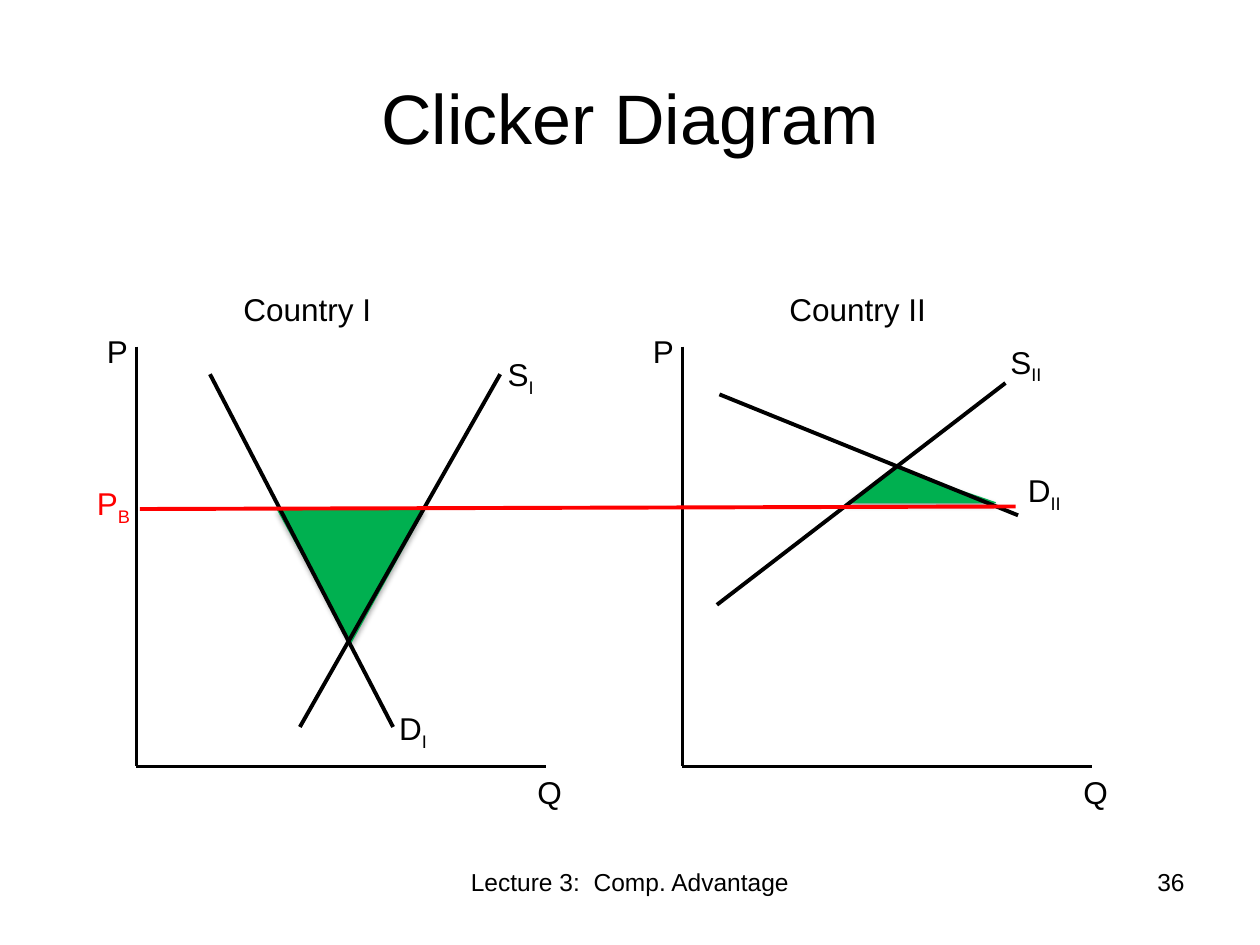
"""Draw a two-country supply and demand slide on a grid of 120 columns by 90 rows."""
from dataclasses import dataclass
from typing import Any, NamedTuple

import pptx
import pptx.dml.color
import pptx.enum.shapes
import pptx.enum.text
import pptx.oxml
import pptx.oxml.ns
import pptx.util

Align = pptx.enum.text.PP_ALIGN
Anchor = pptx.enum.text.MSO_ANCHOR
Fit = pptx.enum.text.MSO_AUTO_SIZE
Kind = pptx.enum.shapes.MSO_SHAPE
Wire = pptx.enum.shapes.MSO_CONNECTOR
Color = pptx.dml.color.RGBColor
Pt = pptx.util.Pt


@dataclass(frozen=True)
class Theme:
    face: str = "Arial"
    ink: Color = Color(0, 0, 0)
    price: Color = Color(255, 0, 0)
    gain: Color = Color(0, 176, 80)
    title: int = 40
    label: int = 18
    foot: int = 14
    stroke: float = 2.25
    edge: float = 0.75


class Line(NamedTuple):
    x1: float
    y1: float
    x2: float
    y2: float
    color: Color


class Label(NamedTuple):
    text: str
    x: float
    y: float
    w: float = 6
    h: float = 4.8
    sub: str = ""
    size: int = 18
    color: Color = Color(0, 0, 0)
    align: Align = Align.LEFT
    anchor: Anchor = Anchor.TOP
    fit: Fit = Fit.SHAPE_TO_FIT_TEXT


class Area(NamedTuple):
    x: float
    y: float
    w: float
    h: float
    peak: float
    turn: int


class Panel(NamedTuple):
    name: str
    left: float


THEME = Theme()
CELL = pptx.util.Inches(1) / 12
PANELS = [Panel("II", 65), Panel("I", 13)]
AREAS = [
    Area(26.4, 48.48, 14.04, 12.72, 0.5, 180),
    Area(80.76, 44.64, 14.04, 3.24, 0.33, 0),
]
CURVES = [
    Line(68.52, 37.56, 96.96, 49.08, THEME.ink),
    Line(68.28, 57.6, 95.76, 36.48, THEME.ink),
    Line(20, 35.64, 37.44, 69.24, THEME.ink),
    Line(28.56, 69.24, 47.64, 35.64, THEME.ink),
    Line(13.32, 48.48, 96.72, 48.24, THEME.price),
]
LABELS = [
    Label("D", 36.84, 66.96, sub="I"),
    Label("D", 96.72, 44.28, sub="II"),
    Label("S", 95.04, 32.04, sub="II"),
    Label("S", 47.16, 33.24, sub="I"),
    Label("P", 8.04, 45.48, sub="B", color=THEME.price),
    Label("Clicker Diagram", 6, 3.6, 108, 15, size=THEME.title,
          align=Align.CENTER, anchor=Anchor.MIDDLE, fit=Fit.NONE),
    Label("Lecture 3:  Comp. Advantage", 41, 82, 38, 6.25, size=THEME.foot,
          align=Align.CENTER, fit=Fit.NONE),
    Label("36", 86, 82, 28, 6.25, size=THEME.foot, align=Align.RIGHT, fit=Fit.NONE),
]
SHADE = (
    f'<a:outerShdw {pptx.oxml.ns.nsdecls("a")} blurRad="40000" dist="23000" '
    'dir="5400000" rotWithShape="0"><a:srgbClr val="000000">'
    '<a:alpha val="35000"/></a:srgbClr></a:outerShdw>'
)


def grid(*cells: float) -> list[int]:
    """Turn grid cells into slide lengths."""
    return [round(cell * CELL) for cell in cells]


def style(item: Any, form: dict[str, Any]) -> None:
    """Set each format value on an item."""
    for key, value in form.items():
        setattr(item, key, value)


def effects(item: Any) -> Any:
    """Give an item an empty effect list and return it."""
    props = item._element.spPr
    old = props.find(pptx.oxml.ns.qn("a:effectLst"))
    if old is not None:
        return old
    new = pptx.oxml.parse_xml(f'<a:effectLst {pptx.oxml.ns.nsdecls("a")}/>')
    props.append(new)
    return new


def draw_line(slide: Any, line: Line) -> None:
    """Draw a straight line."""
    wire = slide.shapes.add_connector(Wire.STRAIGHT, *grid(*line[:4]))
    wire.line.color.rgb = line.color
    wire.line.width = Pt(THEME.stroke)
    effects(wire)


def draw_area(slide: Any, area: Area) -> None:
    """Draw a shaded gain triangle."""
    shape = slide.shapes.add_shape(Kind.ISOSCELES_TRIANGLE, *grid(*area[:4]))
    shape.adjustments[0] = area.peak
    shape.rotation = area.turn
    shape.fill.solid()
    shape.fill.fore_color.rgb = THEME.gain
    shape.line.color.rgb = THEME.gain
    shape.line.width = Pt(THEME.edge)
    shape.shadow.inherit = False
    effects(shape).append(pptx.oxml.parse_xml(SHADE))


def draw_label(slide: Any, label: Label) -> None:
    """Write a label with an optional subscript."""
    box = slide.shapes.add_textbox(*grid(label.x, label.y, label.w, label.h))
    frame = box.text_frame
    style(frame, {"word_wrap": True, "auto_size": label.fit,
                  "vertical_anchor": label.anchor})
    para = frame.paragraphs[0]
    para.alignment = label.align
    for text in filter(None, (label.text, label.sub)):
        run = para.add_run()
        run.text = text
        style(run.font, {"name": THEME.face, "size": Pt(label.size)})
        run.font.color.rgb = label.color
    if label.sub:
        run._r.get_or_add_rPr().set("baseline", "-25000")


def draw_panel(slide: Any, panel: Panel) -> None:
    """Draw the axes and names of one country."""
    left, top, base = panel.left, 33, 73
    draw_line(slide, Line(left, top, left, base, THEME.ink))
    draw_line(slide, Line(left, base, left + 39, base, THEME.ink))
    draw_label(slide, Label(f"Country {panel.name}", left + 9, top - 6, 20))
    draw_label(slide, Label("P", left - 4, top - 2))
    draw_label(slide, Label("Q", left + 37, base))


def main() -> None:
    """Build and save the slide."""
    deck = pptx.Presentation()
    width, height = grid(120, 90)
    style(deck, {"slide_width": width, "slide_height": height})
    slide = deck.slides.add_slide(deck.slide_layouts[6])
    for draw, items in ((draw_area, AREAS), (draw_panel, PANELS),
                        (draw_line, CURVES), (draw_label, LABELS)):
        for item in items:
            draw(slide, item)
    deck.save("out.pptx")


if __name__ == "__main__":
    main()
